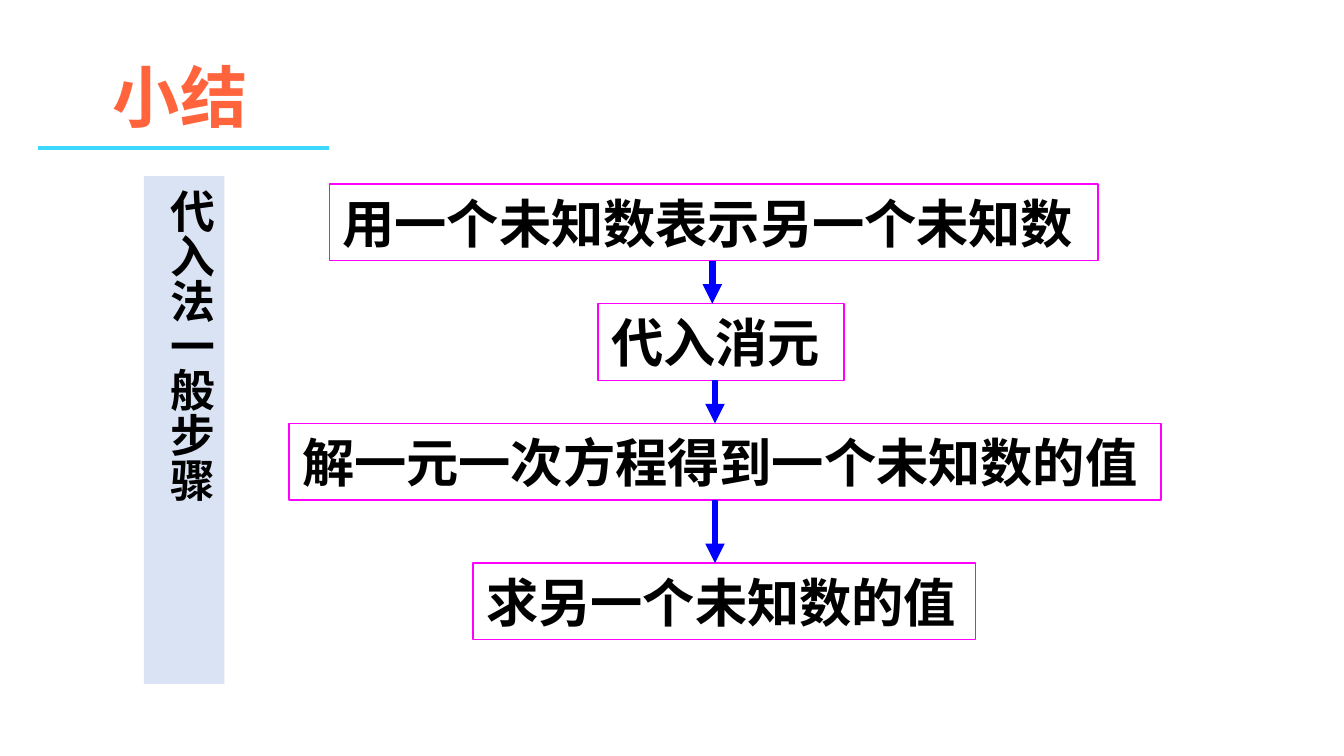
from itertools import pairwise
from typing import NamedTuple

from pptx import Presentation
from pptx.dml.color import RGBColor
from pptx.enum import shapes, text
from pptx.oxml import ns, xmlchemy
from pptx.util import Inches, Pt

FONT = "Noto Sans CJK SC"
ORANGE = RGBColor(0xFF, 0x64, 0x3D)
CYAN = RGBColor(0x3D, 0xD8, 0xFF)
MAGENTA = RGBColor(0xFF, 0x00, 0xFF)
PALE_BLUE = RGBColor(0xDA, 0xE3, 0xF3)
BLUE = RGBColor(0x00, 0x00, 0xFF)
BLACK = RGBColor(0x00, 0x00, 0x00)
STEP_HEIGHT = 0.57


class Step(NamedTuple):
    label: str
    left: float
    top: float
    width: float
    arrow_x: float = 5.32  # where the arrow to the next step leaves


STEPS = [
    Step("用一个未知数表示另一个未知数", 2.45, 1.37, 5.72, arrow_x=5.3),
    Step("代入消元", 4.45, 2.26, 1.83),
    Step("解一元一次方程得到一个未知数的值", 2.15, 3.15, 6.49),
    Step("求另一个未知数的值", 3.52, 4.19, 3.74),
]


def write(sp, label: str, size: int, color: RGBColor, align, anchor) -> None:
    tf = sp.text_frame
    tf.text = label
    tf.vertical_anchor = anchor
    p = tf.paragraphs[0]
    p.alignment = align
    font = p.runs[0].font
    font.size, font.bold, font.name = Pt(size), True, FONT
    font.color.rgb = color
    ea = xmlchemy.OxmlElement("a:ea")
    ea.set("typeface", FONT)
    p.runs[0]._r.rPr.find(ns.qn("a:latin")).addnext(ea)


def add_box(s, left: float, top: float, width: float, height: float):
    sp = s.shapes.add_shape(shapes.MSO_SHAPE.RECTANGLE, Inches(left), Inches(top),
                            Inches(width), Inches(height))
    sp.shadow.inherit = False
    return sp


def add_step(s, step: Step) -> None:
    sp = add_box(s, step.left, step.top, step.width, STEP_HEIGHT)
    sp.fill.background()
    sp.line.color.rgb = MAGENTA
    sp.line.width = Pt(0.75)
    write(sp, step.label, 28, BLACK, text.PP_ALIGN.LEFT, text.MSO_ANCHOR.MIDDLE)


def add_line(s, x1: float, y1: float, x2: float, y2: float,
             color: RGBColor, width: float, arrow: bool = False) -> None:
    line = s.shapes.add_connector(shapes.MSO_CONNECTOR.STRAIGHT, Inches(x1), Inches(y1),
                                  Inches(x2), Inches(y2))
    line.line.color.rgb = color
    line.line.width = Pt(width)
    if arrow:
        tail = xmlchemy.OxmlElement("a:tailEnd")
        tail.set("type", "triangle")
        line.line._get_or_add_ln().append(tail)
    line._element.spPr.append(xmlchemy.OxmlElement("a:effectLst"))


def add_title(s, label: str) -> None:
    sp = s.shapes.title
    sp.left, sp.top = Inches(0.74), Inches(0.36)
    sp.width, sp.height = Inches(1.2), Inches(0.71)
    write(sp, label, 36, ORANGE, text.PP_ALIGN.CENTER, text.MSO_ANCHOR.TOP)
    tf = sp.text_frame
    tf.margin_left = tf.margin_right = 0
    tf.word_wrap = False
    tf.auto_size = text.MSO_AUTO_SIZE.NONE
    add_line(s, 0.28, 1.1, 2.45, 1.1, CYAN, 2.25)


def add_vertical_banner(s, label: str) -> None:
    sp = add_box(s, 1.07, 1.31, 0.6, 3.78)
    sp.fill.solid()
    sp.fill.fore_color.rgb = PALE_BLUE
    sp.line.fill.background()
    write(sp, label, 24, BLACK, text.PP_ALIGN.LEFT, text.MSO_ANCHOR.TOP)
    sp.text_frame._txBody.bodyPr.set("vert", "eaVert")


def main() -> None:
    prs = Presentation()
    prs.slide_width = Inches(10)
    prs.slide_height = prs.slide_width * 9 // 16
    s = prs.slides.add_slide(prs.slide_layouts.get_by_name("Title Only"))
    add_title(s, "小结")
    for step in STEPS:
        add_step(s, step)
    add_vertical_banner(s, "代入法一般步骤")
    for step, following in pairwise(STEPS):
        add_line(s, step.arrow_x, step.top + STEP_HEIGHT, step.arrow_x, following.top,
                 BLUE, 3.5, arrow=True)
    prs.save("out.pptx")


if __name__ == "__main__":
    main()
